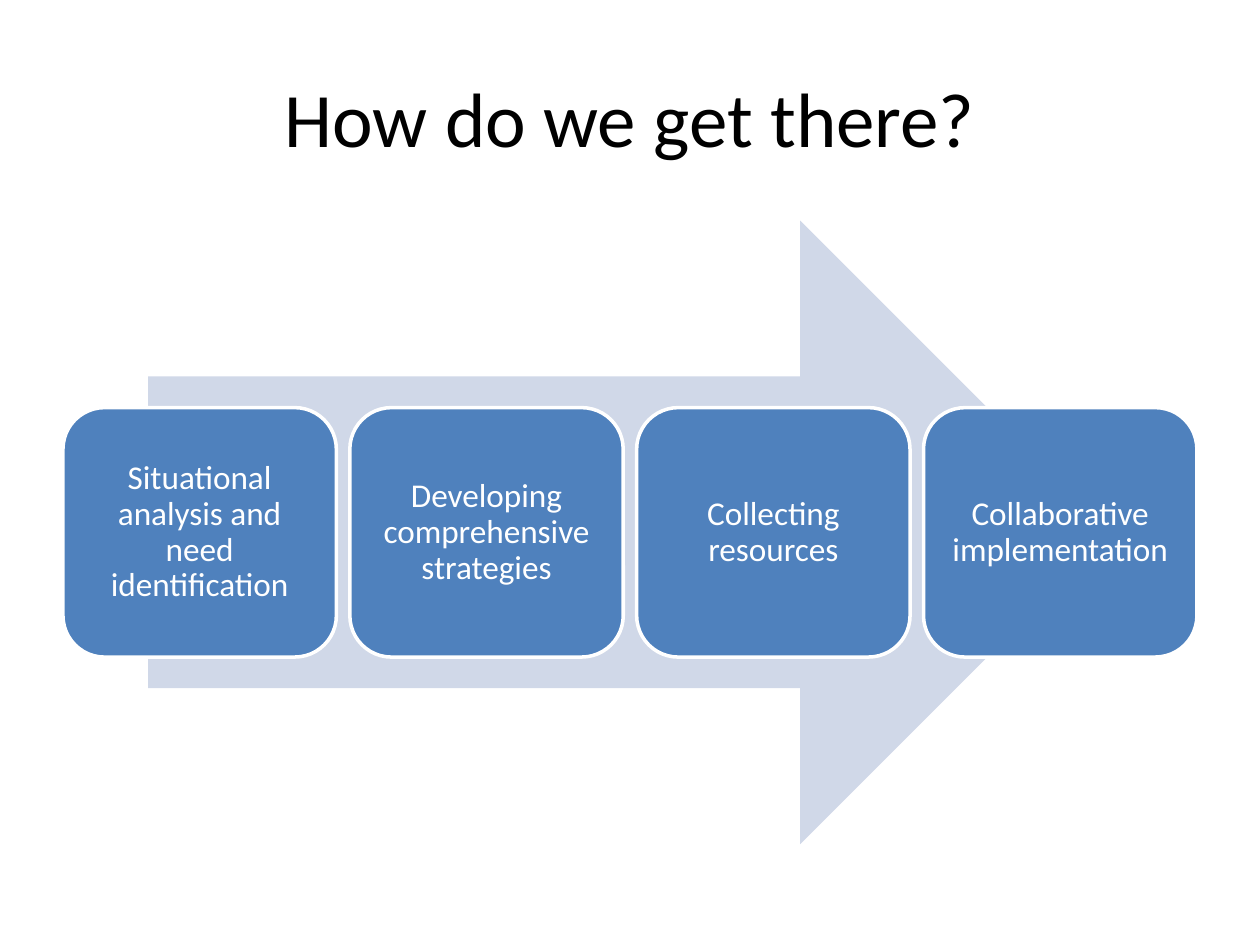
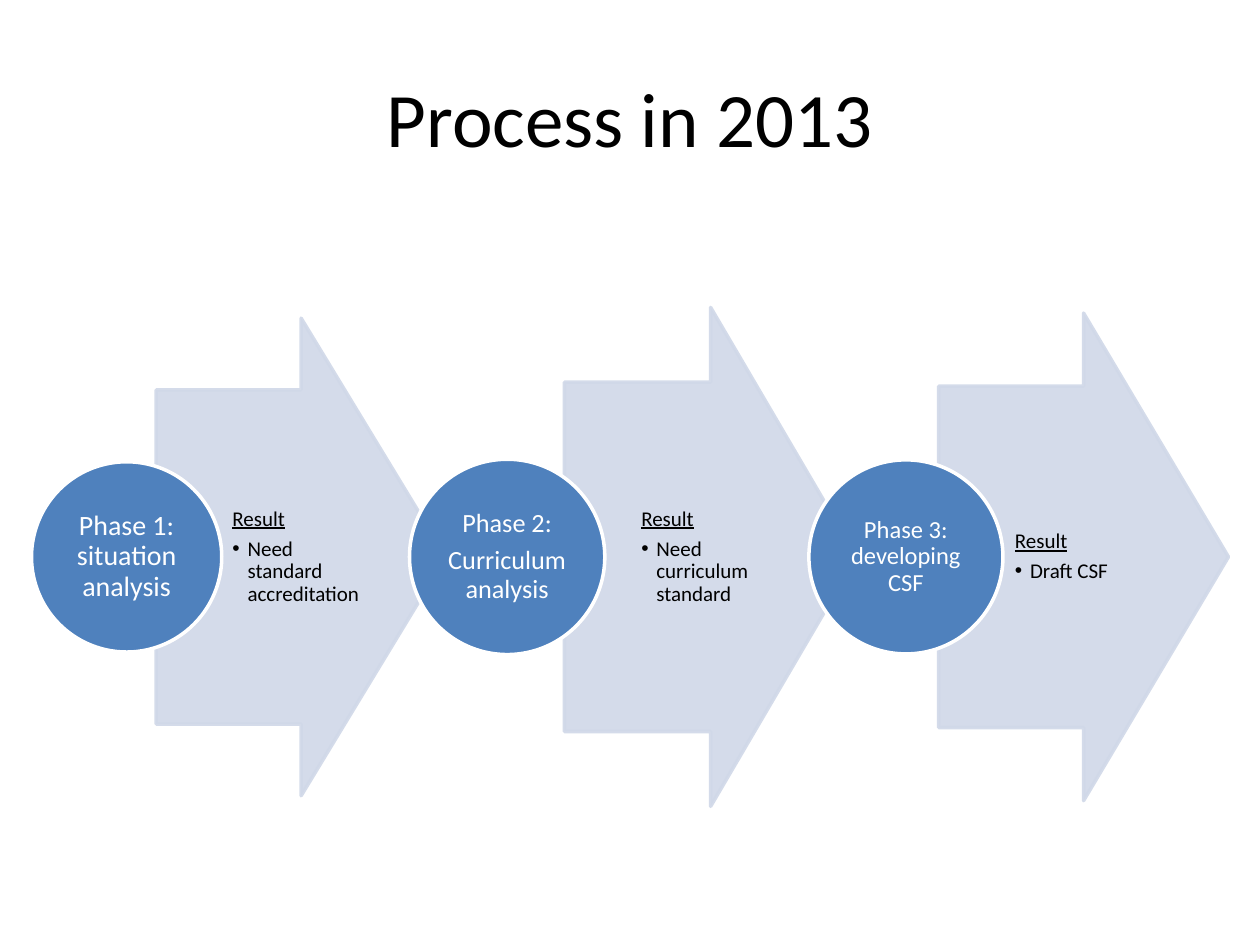
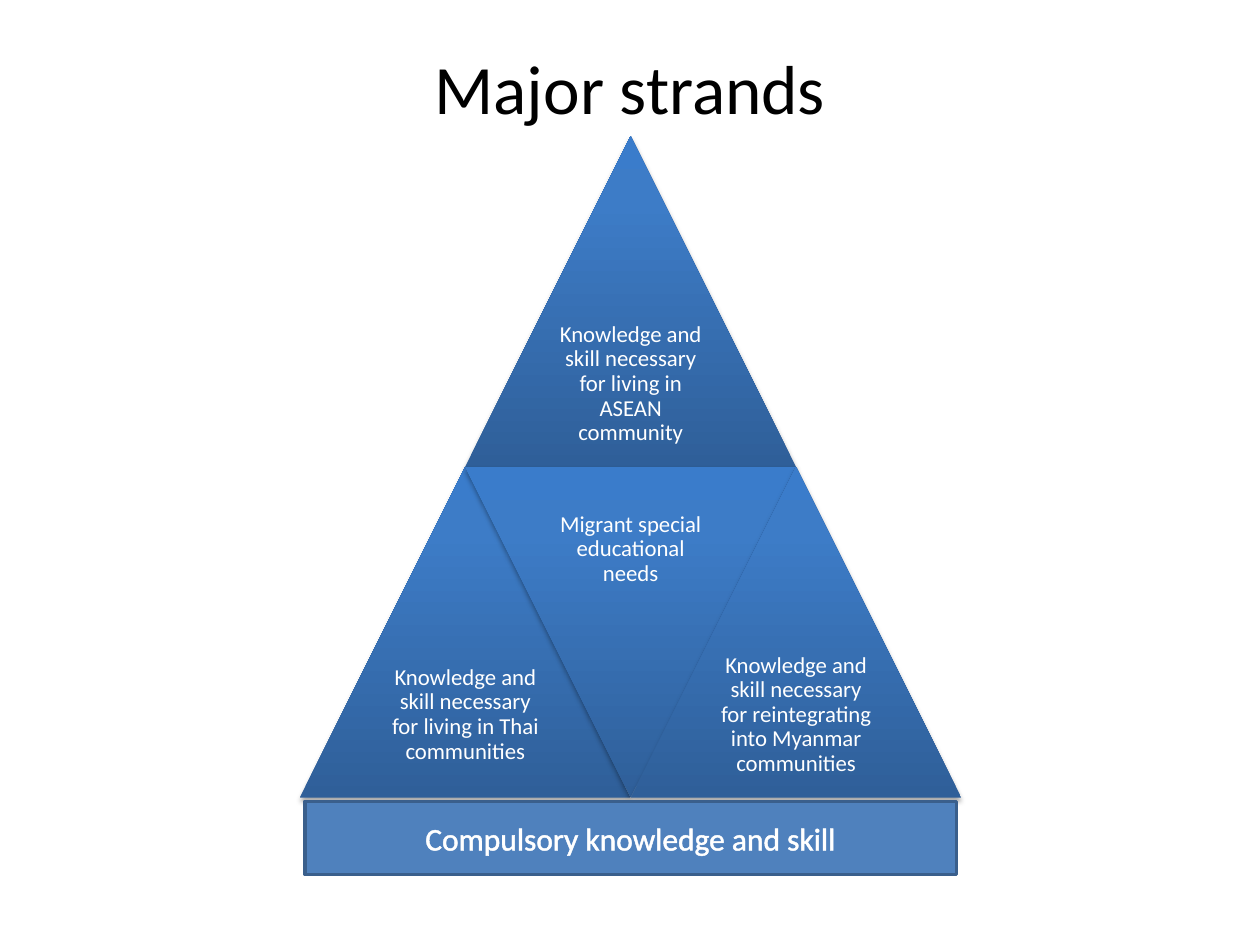
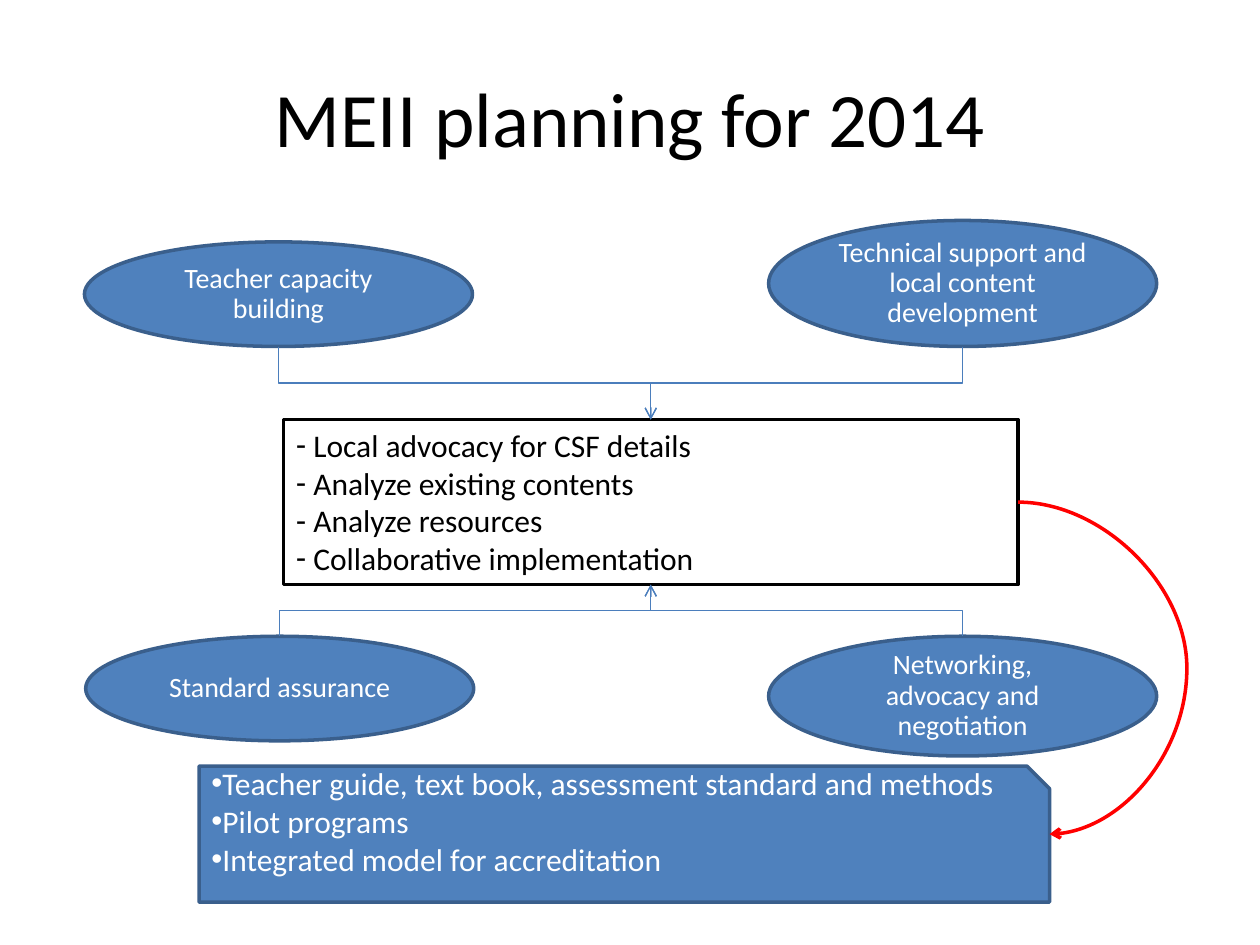
from collections import namedtuple

import lxml.etree
import pptx
import pptx.dml.color
import pptx.enum.dml
import pptx.enum.shapes
import pptx.enum.text
import pptx.oxml
import pptx.oxml.ns
import pptx.util

Inches = pptx.util.Inches
Pt = pptx.util.Pt
RGBColor = pptx.dml.color.RGBColor
SHAPE = pptx.enum.shapes.MSO_SHAPE
CONNECTOR = pptx.enum.shapes.MSO_CONNECTOR
ALIGN = pptx.enum.text.PP_ALIGN
ANCHOR = pptx.enum.text.MSO_ANCHOR
qn = pptx.oxml.ns.qn

FONT = "Calibri"
BLACK = RGBColor(0x00, 0x00, 0x00)
WHITE = RGBColor(0xFF, 0xFF, 0xFF)
BLUE = RGBColor(0x4F, 0x81, 0xBD)
DARK_BLUE = RGBColor(0x3A, 0x5F, 0x8C)
LINK_BLUE = RGBColor(0x4B, 0x7E, 0xBC)
PALE_BLUE = RGBColor(0xD0, 0xD8, 0xE8)
RED = RGBColor(0xFF, 0x00, 0x00)
STRAND_STOPS = (
    (0, RGBColor(0x2F, 0x5F, 0x99)),
    (80, RGBColor(0x3D, 0x7C, 0xC7)),
    (100, RGBColor(0x3A, 0x7C, 0xCB)),
)

# All boxes are in inches
Box = namedtuple("Box", "left top width height")
Phase = namedtuple("Phase", "arrow circle_left diameter size title result")
TITLE_BOX = Box(0.5, 0.3, 9, 1.25)


def lengths(box):
    return [Inches(value) for value in box]


def child(parent, tag, **attributes):
    """Append a DrawingML element such as a:ln."""
    element = lxml.etree.SubElement(parent, qn(tag))
    for key, value in attributes.items():
        element.set(key, str(value))
    return element


# Shared parts
def add_paragraph(frame, text, size, color, align=ALIGN.CENTER, bullet=None,
                  indent=0, spacing=None, after=0, underline=None):
    """Write a paragraph; after is a share of the font size."""
    first = frame.paragraphs[0]
    paragraph = first if not first.runs else frame.add_paragraph()
    paragraph.add_run().text = text
    if bullet:
        properties = paragraph._p.get_or_add_pPr()
        properties.set("marL", str(Inches(indent)))
        properties.set("indent", str(-Inches(indent)))
        child(properties, "a:buFont", typeface="Arial")
        child(properties, "a:buChar", char=bullet)
    paragraph.alignment = align
    if spacing:
        paragraph.line_spacing = spacing
        paragraph.space_after = Pt(after * size)
    font = paragraph.font
    font.name, font.size, font.underline = FONT, Pt(size), underline
    font.color.rgb = color
    return paragraph


def add_label(frame, lines, size, inset):
    """White centred text of a diagram part."""
    set_frame(frame, [inset] * 4)
    for line in lines:
        add_paragraph(frame, line, size, WHITE, spacing=0.9, after=0.35)


def set_frame(frame, margins=(0.1, 0.05, 0.1, 0.05), anchor=ANCHOR.MIDDLE):
    frame.word_wrap = True
    frame.vertical_anchor = anchor
    (frame.margin_left, frame.margin_top,
     frame.margin_right, frame.margin_bottom) = lengths(margins)


def add_shape(slide, kind, box, fill=BLUE, line=DARK_BLUE):
    shape = slide.shapes.add_shape(kind, *lengths(box))
    shape.shadow.inherit = False
    if fill is not None:
        shape.fill.solid()
        shape.fill.fore_color.rgb = fill
    if line is None:
        shape.line.fill.background()
    else:
        shape.line.color.rgb = line
        shape.line.width = Pt(2)
    return shape


def add_text_box(slide, box):
    return slide.shapes.add_textbox(*lengths(box)).text_frame


def add_titled_slide(deck, title, box=TITLE_BOX, size=44):
    slide = deck.slides.add_slide(deck.slide_layouts[6])
    frame = add_text_box(slide, box)
    set_frame(frame)
    add_paragraph(frame, title, size, BLACK)
    return slide


def add_arrow_line(slide, kind, start, end, color, width):
    link = slide.shapes.add_connector(kind, *lengths(start + end))
    link.line.color.rgb = color
    link.line.width = Pt(width)
    child(link.line._get_or_add_ln(), "a:tailEnd", type="arrow")
    child(link._element.spPr, "a:effectLst")
    return link


def add_vertical_elbow(slide, start, end):
    """Elbow that leaves and arrives vertically: a quarter-turned connector."""
    middle_x, middle_y = (start[0] + end[0]) / 2, (start[1] + end[1]) / 2
    across, down = start[0] - middle_x, start[1] - middle_y
    link = add_arrow_line(slide, CONNECTOR.ELBOW,
                          (middle_x + down, middle_y - across),
                          (middle_x - down, middle_y + across),
                          LINK_BLUE, 0.75)
    link._element.spPr.find(qn("a:xfrm")).set("rot", str(90 * 60000))


# Slide 1: four steps on a broad arrow
def draw_steps(slide, box, steps):
    arrow_width = 0.85 * box.width
    add_shape(slide, SHAPE.RIGHT_ARROW,
              Box(box.left + (box.width - arrow_width) / 2, box.top,
                  arrow_width, box.height), PALE_BLUE, None)
    width, height = 2.17, 0.4 * box.height
    pitch = (box.width - width) / (len(steps) - 1)
    for index, step in enumerate(steps):
        card = add_shape(slide, SHAPE.ROUNDED_RECTANGLE,
                         Box(box.left + index * pitch,
                             box.top + 0.3 * box.height, width, height),
                         BLUE, WHITE)
        add_label(card.text_frame, [step], 19, 0.08)


# Slide 2: phase circles with result arrows
def draw_phase(slide, box, phase):
    middle = box.top + box.height / 2
    offset, width, height = phase.arrow
    left, top = box.left + offset, middle - height / 2
    arrow = add_shape(slide, SHAPE.RIGHT_ARROW,
                      Box(left, top, width, height), PALE_BLUE, PALE_BLUE)
    arrow.adjustments[0] = 0.7
    for color in arrow._element.spPr.iter(qn("a:srgbClr")):
        child(color, "a:alpha", val=90000)

    result = add_text_box(slide, Box(left + width / 4, top + 0.15 * height,
                                     0.487 * width, 0.7 * height))
    set_frame(result, (0.03, 0.01, 0.02, 0.01))
    add_paragraph(result, "Result", 12, BLACK, ALIGN.LEFT,
                  spacing=0.9, after=0.35, underline=True)
    add_paragraph(result, phase.result, 12, BLACK, ALIGN.LEFT, "•", 0.12,
                  spacing=0.9, after=0.15)

    size = phase.diameter
    circle = add_shape(slide, SHAPE.OVAL,
                       Box(box.left + phase.circle_left, middle - size / 2,
                           size, size), BLUE, WHITE)
    add_label(circle.text_frame, phase.title, phase.size, 0.01)


# Slide 3: triangle of strands on a base
def draw_strand(slide, box, text, inverted=False):
    triangle = add_shape(slide, SHAPE.ISOSCELES_TRIANGLE, box, None, None)
    triangle.rotation = 180 if inverted else 0
    properties = triangle._element.spPr
    gradient = lxml.etree.Element(qn("a:gradFill"), rotWithShape="0")
    stops = child(gradient, "a:gsLst")
    for position, color in STRAND_STOPS:
        stop = child(stops, "a:gs", pos=position * 1000)
        child(stop, "a:srgbClr", val=color)
    child(gradient, "a:lin", ang=270 * 60000, scaled=0)
    properties.find(qn("a:prstGeom")).addnext(gradient)
    shadow = child(properties.find(qn("a:effectLst")), "a:outerShdw",
                   blurRad=Pt(3.1), dist=Pt(1.8), dir=90 * 60000,
                   rotWithShape=0)
    child(child(shadow, "a:srgbClr", val=BLACK), "a:alpha", val=35000)

    half = box.height / 2
    label = add_text_box(slide, Box(box.left + box.width / 4,
                                    box.top + (0 if inverted else half),
                                    box.width / 2, half))
    add_label(label, [text], 13, 0.05)


def draw_pyramid(slide, box, top, left, center, right):
    side = box.width / 2
    lower = box.top + side
    draw_strand(slide, Box(box.left + side / 2, box.top, side, side), top)
    draw_strand(slide, Box(box.left, lower, side, side), left)
    draw_strand(slide, Box(box.left + side / 2, lower, side, side), center,
                inverted=True)
    draw_strand(slide, Box(box.left + side, lower, side, side), right)


def draw_base(slide, box, text):
    frame = add_shape(slide, SHAPE.RECTANGLE, box).text_frame
    set_frame(frame)
    run = add_paragraph(frame, text, 18, WHITE).runs[0]
    outline = child(run._r.get_or_add_rPr(), "a:ln", w=Pt(1.45))
    child(child(outline, "a:solidFill"), "a:srgbClr", val=WHITE)


# Slide 4: four supports around a task list, leading to outputs
def draw_plan(slide, box, tasks, supports, outputs):
    def place(left, top, width, height):
        return Box(box.left + left, box.top + top, width, height)

    task_box = place(1.75, 1.58, 5.83, 1.31)
    task_list = add_shape(slide, SHAPE.RECTANGLE, task_box, WHITE,
                          BLACK).text_frame
    set_frame(task_list, anchor=ANCHOR.TOP)
    for task in tasks:
        add_paragraph(task_list, f" {task}", 18, BLACK, ALIGN.LEFT, "-")

    # Supports and the elbows into the task list
    task_middle = task_box.left + task_box.width / 2
    task_bottom = task_box.top + task_box.height
    links = []
    for text, left, top, height in supports:
        oval_box = place(left, top, 3.08, height)
        oval = add_shape(slide, SHAPE.OVAL, oval_box).text_frame
        # Tight lines keep three-line labels inside the outline
        set_frame(oval, (0.1, 0, 0.1, 0))
        add_paragraph(oval, text, 16, WHITE, spacing=0.9)
        above = oval_box.top < task_box.top
        links.append(((oval_box.left + oval_box.width / 2,
                       oval_box.top + (height if above else 0)),
                      (task_middle, task_box.top if above else task_bottom)))
    for start, end in links:
        add_vertical_elbow(slide, start, end)

    output_box = place(1.08, 4.33, 6.75, 1.08)
    output_list = add_shape(slide, SHAPE.SNIP_1_RECTANGLE,
                            output_box).text_frame
    set_frame(output_list, (0.1, 0.05, 0.1, 0.35))
    for output in outputs:
        add_paragraph(output_list, output, 18, WHITE, ALIGN.LEFT, "•")

    # Curve from tasks to outputs, bulging 1.34 inches to the right
    start = (task_box.left + task_box.width,
             task_box.top + task_box.height / 2)
    end = (output_box.left + output_box.width,
           output_box.top + output_box.height / 2)
    curve = add_arrow_line(slide, CONNECTOR.CURVE, start, end, RED, 2)
    geometry = curve._element.spPr.find(qn("a:prstGeom"))
    guides = geometry.find(qn("a:avLst"))
    if guides is None:
        guides = child(geometry, "a:avLst")
    bulge = round(1.34 / (end[0] - start[0]) * 100000)
    child(guides, "a:gd", name="adj1", fmla=f"val {bulge}")


def main():
    deck = pptx.Presentation()
    deck.slide_width, deck.slide_height = Inches(10), Inches(7.5)

    draw_steps(add_titled_slide(deck, "How do we get there?"),
               Box(0.5, 1.75, 9, 4.95),
               ("Situational analysis and need identification",
                "Developing comprehensive strategies",
                "Collecting resources",
                "Collaborative implementation"))

    process = add_titled_slide(deck, "Process in 2013")
    for phase in (
        Phase((0.99, 2.3, 3.79), 0, 1.51, 16,
              ["Phase 1: situation analysis"], "Need standard accreditation"),
        Phase((4.23, 2.32, 3.96), 3, 1.55, 15,
              ["Phase 2:", "Curriculum analysis"], "Need curriculum standard"),
        Phase((7.2, 2.3, 3.87), 6.17, 1.54, 14,
              ["Phase 3: developing CSF"], "Draft CSF"),
    ):
        draw_phase(process, Box(0.25, 2.44, 9.5, 3.96), phase)

    strands = add_titled_slide(deck, "Major strands",
                               TITLE_BOX._replace(height=0.78), 39.6)
    draw_pyramid(
        strands, Box(2.38, 1.08, 5.25, 5.25),
        top="Knowledge and skill necessary for living in ASEAN community",
        left="Knowledge and skill necessary for living in Thai communities",
        center="Migrant special educational needs",
        right="Knowledge and skill necessary for reintegrating into Myanmar "
              "communities")
    draw_base(strands, Box(2.42, 6.36, 5.17, 0.58),
              "Compulsory knowledge and skill")

    draw_plan(
        add_titled_slide(deck, "MEII planning for 2014"),
        Box(0.5, 1.75, 9, 5.41),
        tasks=("Local advocacy for CSF details", "Analyze existing contents",
               "Analyze resources", "Collaborative implementation"),
        supports=(
            ("Teacher capacity building", 0.17, 0.17, 0.83),
            ("Technical support and local content development", 5.6, 0, 1),
            ("Networking, advocacy and negotiation", 5.6, 3.3, 0.95),
            ("Standard assurance", 0.18, 3.3, 0.83),
        ),
        outputs=("Teacher guide, text book, assessment standard and methods",
                 "Pilot programs", "Integrated model for accreditation"))

    deck.save("out.pptx")


if __name__ == "__main__":
    main()
